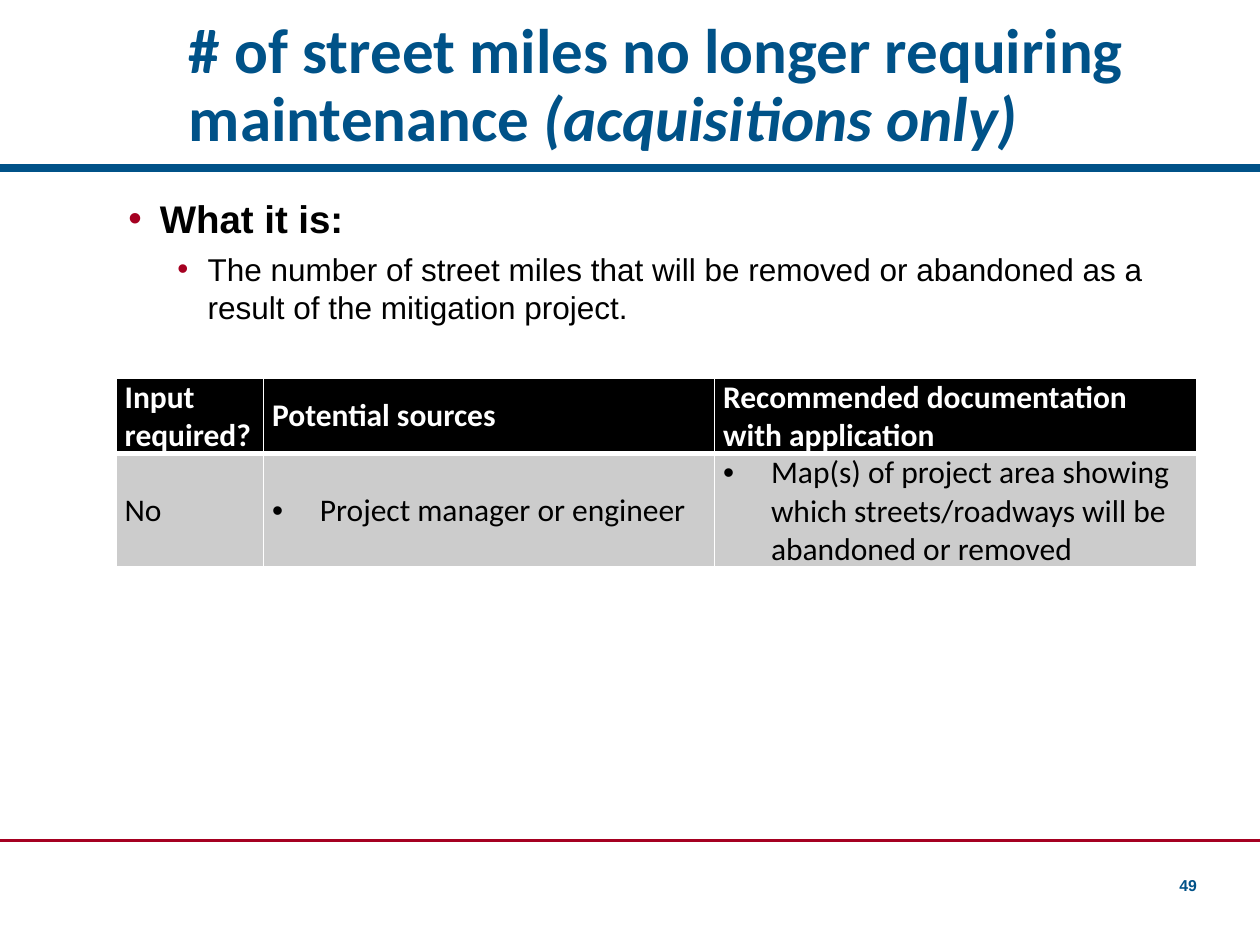
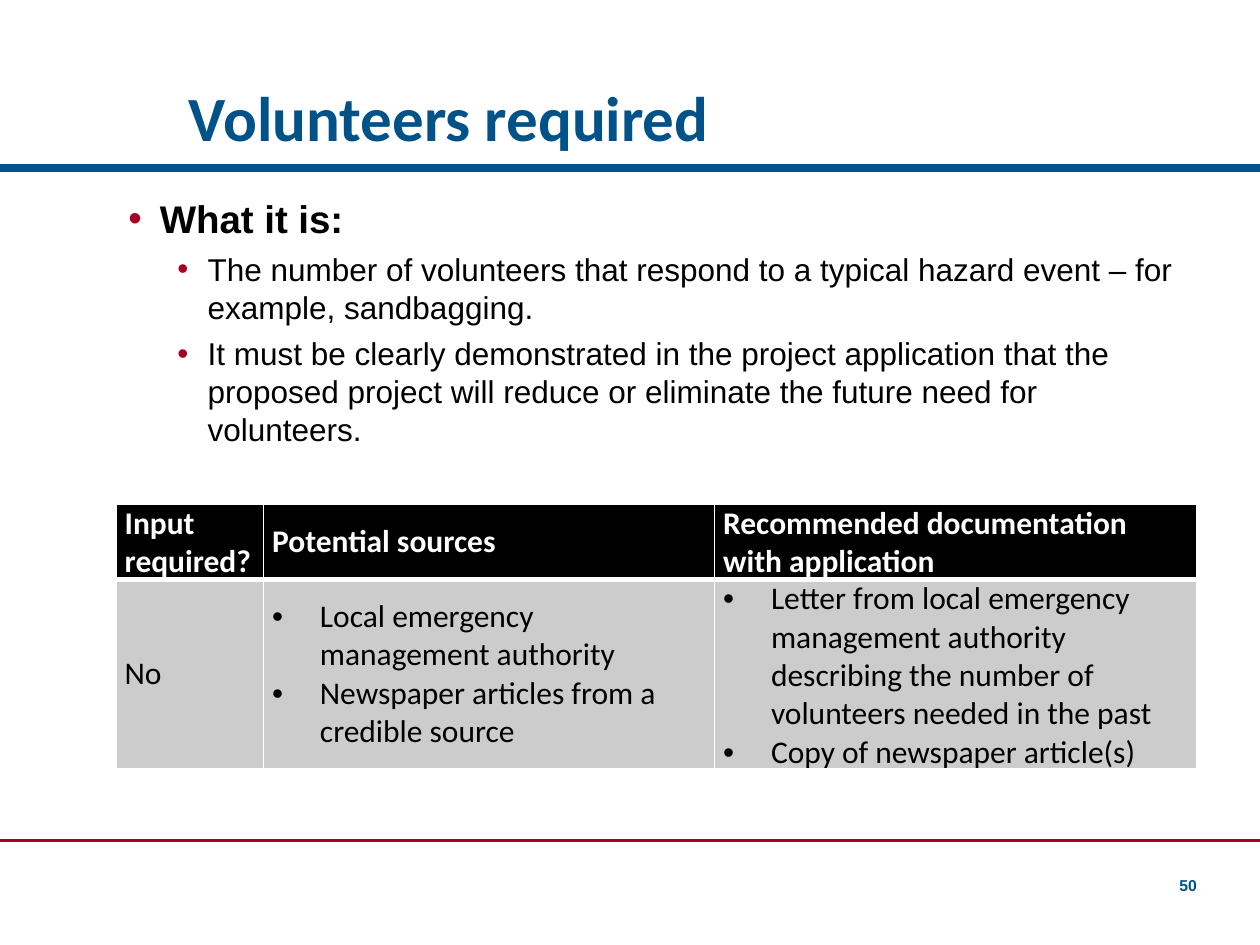
import pptx
import pptx.dml.color
import pptx.enum.shapes
import pptx.enum.text
import pptx.oxml.ns
import pptx.util
from lxml import etree
from pptx.util import Inches

BLUE, RED, BLACK, WHITE, GRAY = "005288", "A50021", "000000", "FFFFFF", "CCCCCC"
ANCHOR = pptx.enum.text.MSO_ANCHOR
ALIGN = pptx.enum.text.PP_ALIGN

TITLE_FONT = {"name": "Calibri", "size": 36, "color": BLUE, "bold": True}
HEADING_FONT = {"name": "Arial", "size": 22, "color": BLACK, "bold": True}
DETAIL_FONT = {"name": "Arial", "size": 18, "color": BLACK, "bold": False}
HEADER_FONT = {"name": "Calibri", "size": 18, "color": WHITE, "bold": True}
CELL_FONT = {"name": "Calibri", "size": 18, "color": BLACK, "bold": False}
NUMBER_FONT = {"name": "Arial", "size": 9, "color": BLUE, "bold": True}

HEADERS = ["Input required?", "Potential sources",
           "Recommended documentation with application"]
COLUMN_WIDTHS = [1.17, 3.58, 3.83]
HEADER_HEIGHT = 0.6


def color(value):
    return pptx.dml.color.RGBColor.from_string(value)


def add_element(parent, tag, **attributes):
    element = etree.SubElement(parent, pptx.oxml.ns.qn(tag))
    for name, value in attributes.items():
        element.set(name, str(value))
    return element


def add_run(paragraph, text, font, **changes):
    run = paragraph.add_run()
    run.text = text
    for name, value in {**font, **changes}.items():
        if name == "color":
            run.font.color.rgb = color(value)
        else:
            setattr(run.font, name, pptx.util.Pt(value) if name == "size" else value)


def set_bullet(paragraph, left, hanging, bullet_color):
    properties = paragraph._p.get_or_add_pPr()
    properties.set("marL", str(Inches(left)))
    properties.set("indent", str(-Inches(hanging)))
    add_element(add_element(properties, "a:buClr"), "a:srgbClr", val=bullet_color)
    add_element(properties, "a:buFont", typeface="Arial")
    add_element(properties, "a:buChar", char="•")


def next_paragraph(frame, index):
    return frame.add_paragraph() if index else frame.paragraphs[0]


def add_text_box(slide, box, anchor=ANCHOR.TOP, margins=(0.1, 0.05, 0.1, 0.05)):
    frame = slide.shapes.add_textbox(*map(Inches, box)).text_frame
    frame.word_wrap = True
    frame.vertical_anchor = anchor
    for side, margin in zip(("left", "top", "right", "bottom"), margins):
        setattr(frame, "margin_" + side, Inches(margin))
    return frame


def add_rule(slide, top, line_color, width):
    rule = slide.shapes.add_connector(
        pptx.enum.shapes.MSO_CONNECTOR.STRAIGHT,
        Inches(0), Inches(top), Inches(10), Inches(top))
    rule.line.color.rgb = color(line_color)
    rule.line.width = pptx.util.Pt(width)
    add_element(rule._element.spPr, "a:effectLst")


def add_title(slide, box, title, aside):
    frame = add_text_box(slide, box, ANCHOR.BOTTOM, (0, 0.05, 0.1, 0.05))
    paragraph = frame.paragraphs[0]
    paragraph.line_spacing = 0.9
    add_run(paragraph, title, TITLE_FONT)
    if aside:
        add_run(paragraph, aside, TITLE_FONT, italic=True)


def add_description(slide, box, details):
    frame = add_text_box(slide, box)
    for index, text in enumerate(["What it is:"] + details):
        paragraph = next_paragraph(frame, index)
        if index:
            set_bullet(paragraph, 0.63, 0.24, RED)
            paragraph.level = 1
            paragraph.space_before = pptx.util.Pt(5)
        else:
            set_bullet(paragraph, 0.25, 0.25, RED)
        add_run(paragraph, text, DETAIL_FONT if index else HEADING_FONT)


def set_borders(cell, widths):
    """Draw white borders; the line elements must precede the cell's fill."""
    properties = cell._tc.get_or_add_tcPr()
    for position, (side, width) in enumerate(widths.items()):
        line = add_element(properties, "a:ln" + side, w=pptx.util.Pt(width))
        add_element(add_element(line, "a:solidFill"), "a:srgbClr", val=WHITE)
        properties.insert(position, line)


def fill_cell(cell, lines, font, fill, bulleted, borders):
    cell.fill.solid()
    cell.fill.fore_color.rgb = color(fill)
    cell.vertical_anchor = ANCHOR.MIDDLE
    cell.margin_left = cell.margin_right = Inches(0.07)
    cell.margin_top = cell.margin_bottom = 0
    for index, text in enumerate(lines):
        paragraph = next_paragraph(cell.text_frame, index)
        if bulleted:
            set_bullet(paragraph, 0.38, 0.38, BLACK)
        add_run(paragraph, text, font)
    set_borders(cell, borders)


def add_source_table(slide, box, sources, documents):
    table = slide.shapes.add_table(2, 3, *map(Inches, box)).table
    for column, width in zip(table.columns, COLUMN_WIDTHS):
        column.width = Inches(width)
    table.rows[0].height = Inches(HEADER_HEIGHT)
    table.rows[1].height = Inches(box[3] - HEADER_HEIGHT)
    for index, (header, lines) in enumerate(zip(HEADERS, [["No"], sources, documents])):
        fill_cell(table.cell(0, index), [header], HEADER_FONT, BLACK, False,
                  {"L": 1, "R": 1, "T": 1, "B": 3})
        fill_cell(table.cell(1, index), lines, CELL_FONT, GRAY, index > 0,
                  {"L": 1, "R": 1, "T": 3, "B": 1})


def add_slide_number(slide, box, number):
    frame = add_text_box(slide, box, ANCHOR.BOTTOM, (0, 0.05, 0, 0.05))
    frame.paragraphs[0].alignment = ALIGN.RIGHT
    add_run(frame.paragraphs[0], str(number), NUMBER_FONT)


def add_measure_slide(presentation, number, title, details, table_top, table_height,
                      sources, documents, aside=""):
    slide = presentation.slides.add_slide(presentation.slide_layouts[6])
    add_rule(slide, 1.33, BLUE, 4.5)
    add_rule(slide, 6.67, RED, 1.5)
    add_title(slide, (1.5, 0, 8, 1.28), title, aside)
    add_description(slide, (0.92, 1.5, 8.58, 4.75), details)
    add_source_table(slide, (0.92, table_top, sum(COLUMN_WIDTHS), table_height),
                     sources, documents)
    add_slide_number(slide, (9.17, 6.9, 0.33, 0.25), number)


def main():
    presentation = pptx.Presentation()
    presentation.slide_width = Inches(10)
    presentation.slide_height = Inches(7.5)

    add_measure_slide(
        presentation, 49, "# of street miles no longer requiring maintenance ",
        ["The number of street miles that will be removed or abandoned as a result "
         "of the mitigation project."],
        3, 1.5,
        ["Project manager or engineer"],
        ["Map(s) of project area showing which streets/roadways will be abandoned "
         "or removed"],
        aside="(acquisitions only)")

    add_measure_slide(
        presentation, 50, "Volunteers required",
        ["The number of volunteers that respond to a typical hazard event – for "
         "example, sandbagging.",
         "It must be clearly demonstrated in the project application that the "
         "proposed project will reduce or eliminate the future need for volunteers."],
        4, 2.1,
        ["Local emergency management authority",
         "Newspaper articles from a credible source"],
        ["Letter from local emergency management authority describing the number of "
         "volunteers needed in the past",
         "Copy of newspaper article(s)"])

    presentation.save("out.pptx")


if __name__ == "__main__":
    main()
